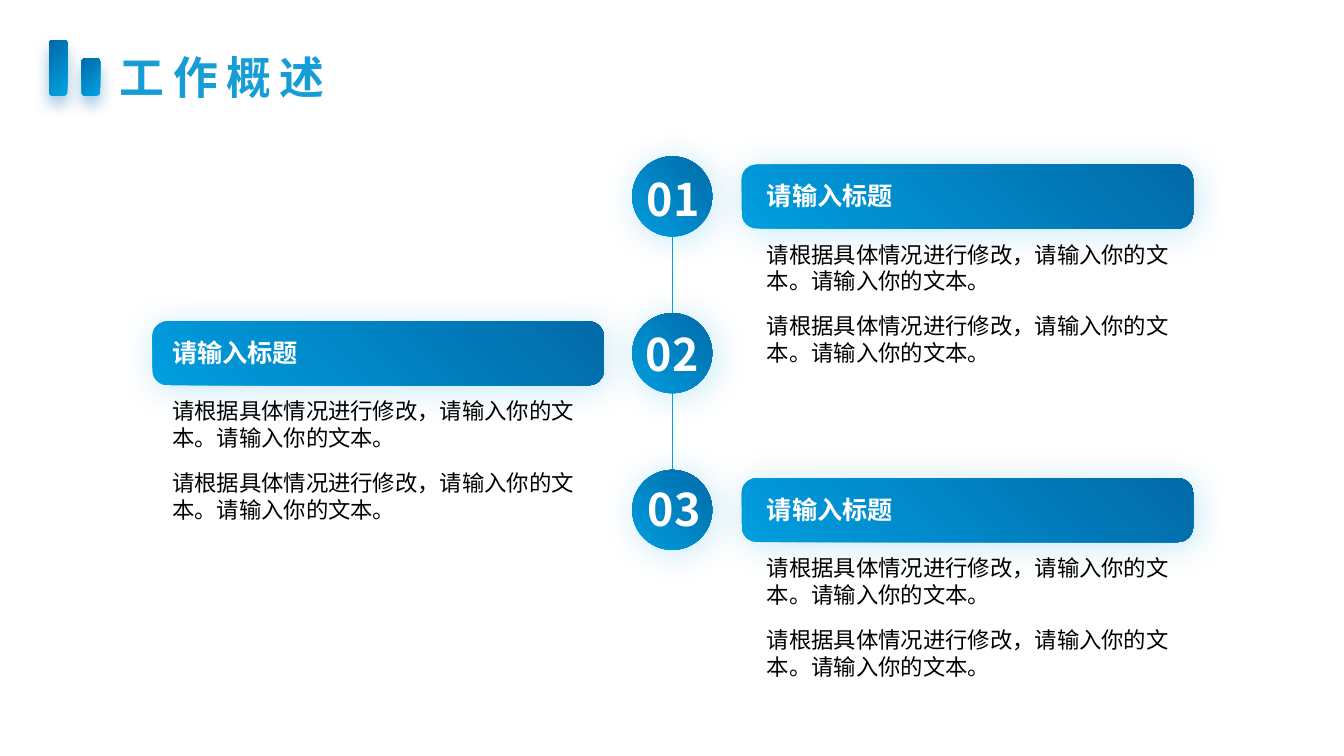
"""Build the work overview slide: three numbered sections along a vertical line."""
from dataclasses import dataclass

from lxml.etree import SubElement
from pptx import Presentation
from pptx.dml.color import RGBColor
from pptx.enum.shapes import MSO_CONNECTOR as Connector, MSO_SHAPE as Preset
from pptx.enum.text import MSO_AUTO_SIZE as AutoSize
from pptx.oxml.ns import qn
from pptx.shapes.autoshape import Shape
from pptx.shapes.shapetree import SlideShapes
from pptx.util import Cm, Pt


@dataclass(frozen=True)
class Theme:
    """Colours, font and type sizes of the slide."""
    font: str = "Noto Sans CJK SC"
    accent: str = "00A3E2"
    light: str = "009EDF"
    deep: str = "026AA8"
    heading: str = "169DD5"
    white: str = "FFFFFF"
    black: str = "000000"
    display_size: int = 32
    title_size: int = 18
    body_size: int = 16


@dataclass(frozen=True)
class Box:
    """A place on the slide in centimetres."""
    left: float
    top: float
    width: float
    height: float

    def lengths(self) -> tuple[Cm, Cm, Cm, Cm]:
        """Return left, top, width and height as lengths."""
        return Cm(self.left), Cm(self.top), Cm(self.width), Cm(self.height)


@dataclass(frozen=True)
class Finish:
    """A two-colour gradient with a soft shadow."""
    start: str
    end: str
    angle: int
    shadow: str
    opacity: int
    blur: float
    distance: float
    direction: int


@dataclass(frozen=True)
class TextStyle:
    """The look of one text."""
    size: int
    color: str
    bold: bool = False
    wrap: bool = False
    spacing: float = 0


@dataclass(frozen=True)
class Section:
    """One numbered section with its horizontal places."""
    number: str
    number_left: float
    banner_left: float
    text_left: float


THEME = Theme()
PANEL = Finish(THEME.light, THEME.deep, 45, THEME.accent, 23, 25, 3, 45)
EMBLEM = Finish(THEME.accent, THEME.deep, 315, THEME.deep, 40, 11, 6, 90)
HEADING = TextStyle(THEME.display_size, THEME.heading, bold=True, spacing=6)
NUMBER = TextStyle(THEME.display_size, THEME.white, bold=True)
TITLE = TextStyle(THEME.title_size, THEME.white, bold=True)
BODY = TextStyle(THEME.body_size, THEME.black, wrap=True)

SECTIONS = (
    Section("01", 16.05, 18.69, 19.08),
    Section("02", 16.03, 3.84, 4.09),
    Section("03", 16.08, 18.69, 19.08),
)
SECTION_TITLE = "请输入标题"
SECTION_BODY = "请根据具体情况进行修改，请输入你的文本。请输入你的文本。"
CIRCLE_LEFT, CIRCLE_SIZE = 15.93, 2.02
FIRST_TOP, PITCH = 3.94, 3.95
NUMBER_TOP, NUMBER_PITCH = 4.19, 3.91
EMBLEM_BOTTOM, EMBLEM_WIDTH = 2.41, 0.46


def add_panel(shapes: SlideShapes, preset: Preset, box: Box, finish: Finish) -> Shape:
    """Add a borderless gradient shape with a shadow."""
    panel = shapes.add_shape(preset, *box.lengths())
    panel.fill.gradient()
    panel.fill.gradient_angle = finish.angle
    for stop, color in zip(panel.fill.gradient_stops, (finish.start, finish.end)):
        stop.color.rgb = RGBColor.from_string(color)
    panel.line.fill.background()
    panel.shadow.inherit = False
    effects = panel._element.spPr.find(qn("a:effectLst"))
    shadow = SubElement(
        effects, qn("a:outerShdw"), blurRad=str(Pt(finish.blur)),
        dist=str(Pt(finish.distance)), dir=str(finish.direction * 60000),
        algn="ctr", rotWithShape="0")
    tone = SubElement(shadow, qn("a:srgbClr"), val=finish.shadow)
    SubElement(tone, qn("a:alpha"), val=str(finish.opacity * 1000))
    return panel


def add_text(shapes: SlideShapes, text: str, box: Box, style: TextStyle) -> None:
    """Add a one-paragraph text box."""
    frame = shapes.add_textbox(*box.lengths()).text_frame
    frame.word_wrap = style.wrap
    frame.auto_size = AutoSize.SHAPE_TO_FIT_TEXT
    paragraph = frame.paragraphs[0]
    paragraph.text = text
    font = paragraph.font
    font.size = Pt(style.size)
    font.bold = style.bold
    font.color.rgb = RGBColor.from_string(style.color)
    font.name = THEME.font
    properties = paragraph._p.pPr.find(qn("a:defRPr"))
    SubElement(properties, qn("a:ea"), typeface=THEME.font)
    if style.spacing:
        properties.set("spc", str(int(style.spacing * 100)))


def add_timeline(shapes: SlideShapes) -> None:
    """Add the vertical line behind the circles."""
    center = Cm(CIRCLE_LEFT + CIRCLE_SIZE / 2)
    start = FIRST_TOP + CIRCLE_SIZE
    end = start + PITCH * (len(SECTIONS) - 1)
    timeline = shapes.add_connector(
        Connector.STRAIGHT, center, Cm(start), center, Cm(end))
    timeline.line.color.rgb = RGBColor.from_string(THEME.accent)
    timeline.line.width = Pt(0.5)
    SubElement(timeline._element.spPr, qn("a:effectLst"))


def add_header(shapes: SlideShapes) -> None:
    """Add the two-bar emblem and the slide heading."""
    for left, height in ((1.24, 1.4), (2.06, 0.94)):
        box = Box(left, EMBLEM_BOTTOM - height, EMBLEM_WIDTH, height)
        add_panel(shapes, Preset.ROUNDED_RECTANGLE, box, EMBLEM).rotation = 180
    add_text(shapes, "工作概述", Box(2.77, 1.12, 5.89, 1.63), HEADING)


def add_section(shapes: SlideShapes, index: int, section: Section) -> None:
    """Add one section: circle, number, banner, title and two texts."""
    top = FIRST_TOP + PITCH * index
    add_panel(shapes, Preset.OVAL,
              Box(CIRCLE_LEFT, top, CIRCLE_SIZE, CIRCLE_SIZE), PANEL)
    banner = add_panel(shapes, Preset.ROUNDED_RECTANGLE,
                       Box(section.banner_left, top + 0.21, 11.38, 1.61), PANEL)
    banner.adjustments[0] = 0.235
    number_top = NUMBER_TOP + NUMBER_PITCH * index
    add_text(shapes, section.number,
             Box(section.number_left, number_top, 1.9, 1.63), NUMBER)
    add_text(shapes, SECTION_TITLE,
             Box(section.text_left, top + 0.48, 3.81, 1.02), TITLE)
    for offset in (2.0, 3.81):
        add_text(shapes, SECTION_BODY,
                 Box(section.text_left, top + offset, 11, 1.63), BODY)


def main() -> None:
    """Build and save the slide."""
    deck = Presentation()
    deck.slide_width, deck.slide_height = Cm(33.87), Cm(19.05)
    shapes = deck.slides.add_slide(deck.slide_layouts[6]).shapes
    add_timeline(shapes)
    add_header(shapes)
    for index, section in enumerate(SECTIONS):
        add_section(shapes, index, section)
    deck.save("out.pptx")


if __name__ == "__main__":
    main()
